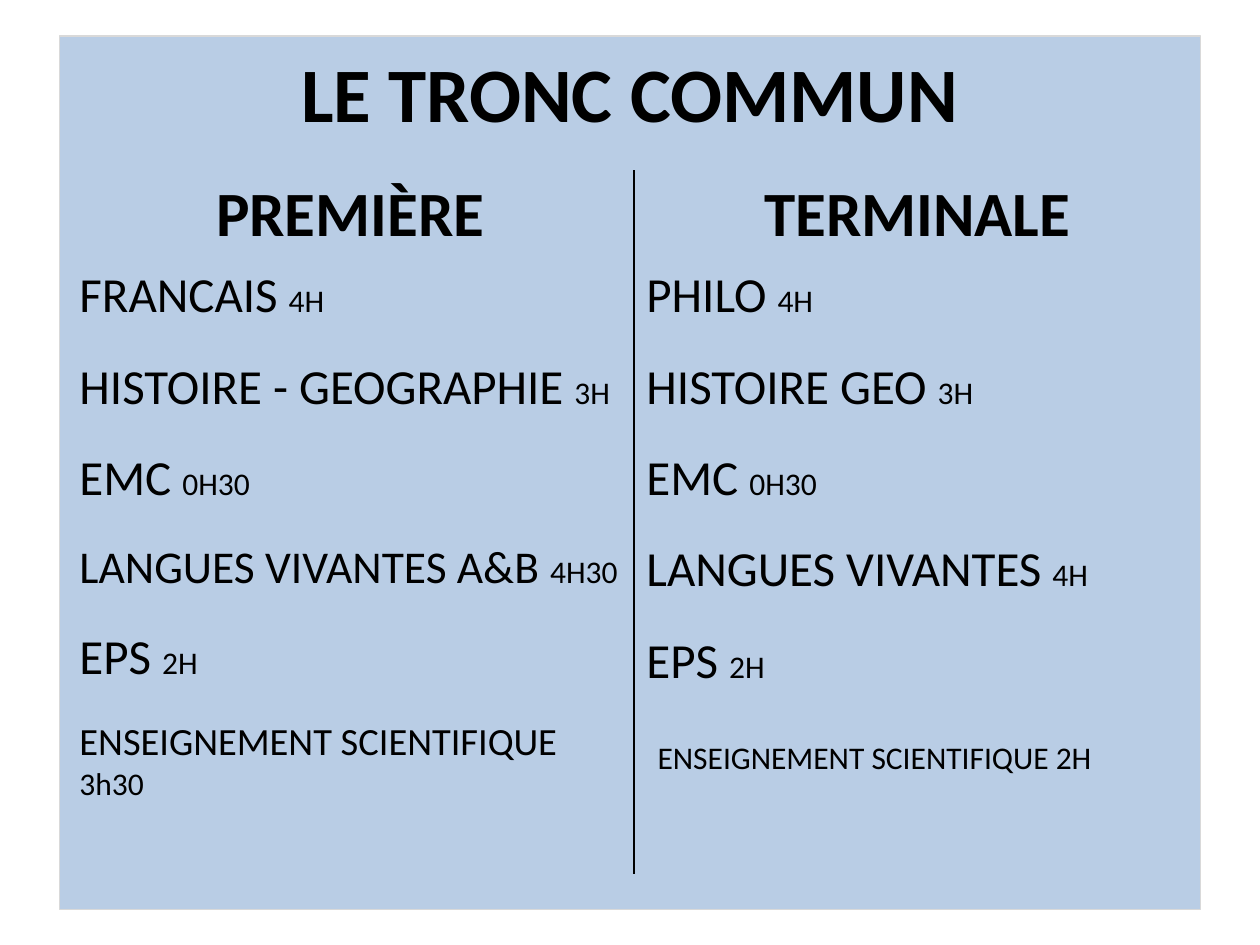
from dataclasses import dataclass

from lxml import etree
from pptx import Presentation
from pptx.dml.color import RGBColor
from pptx.enum import shapes, text
from pptx.oxml import ns
from pptx.util import Pt


@dataclass(frozen=True)
class Theme:
    font: str = "Calibri"
    ink: str = "000000"
    panel: str = "B9CDE5"
    panel_edge: str = "D9D9D9"
    title: int = 44
    heading: int = 36
    subject: int = 28
    long_subject: int = 26
    longest_subject: int = 22
    hours: int = 18


theme = Theme()
no_style_no_grid = "{2D5ABB26-0587-4C30-8999-92F81FD0307C}"

columns = [
    ("PREMIÈRE", [
        [("FRANCAIS ", theme.subject), ("4H", theme.hours)],
        [("HISTOIRE - GEOGRAPHIE ", theme.subject), ("3H", theme.hours)],
        [("EMC ", theme.subject), ("0H30", theme.hours)],
        [("LANGUES VIVANTES A&B ", theme.long_subject), ("4H30", theme.hours)],
        [("EPS ", theme.subject), ("2H", theme.hours)],
        [("ENSEIGNEMENT SCIENTIFIQUE ", theme.longest_subject), ("3h30", theme.hours)],
    ]),
    ("TERMINALE", [
        [("PHILO ", theme.subject), ("4H", theme.hours)],
        [("HISTOIRE GEO ", theme.subject), ("3H", theme.hours)],
        [("EMC ", theme.subject), ("0H30", theme.hours)],
        [("LANGUES VIVANTES ", theme.subject), ("4H", theme.hours)],
        [("EPS ", theme.subject), ("2H", theme.hours)],
        [(" ", theme.subject), ("ENSEIGNEMENT SCIENTIFIQUE 2H", theme.hours)],
    ]),
]


def add_run(paragraph, wording, size, bold=False):
    run = paragraph.add_run()
    run.text = wording
    run.font.name = theme.font
    run.font.size = Pt(size)
    run.font.bold = bold
    run.font.color.rgb = RGBColor.from_string(theme.ink)


def add_border(cell, side):
    properties = cell._tc.get_or_add_tcPr()
    line = etree.Element(ns.qn(f"a:{side}"), w=str(Pt(1.5)))
    fill = etree.SubElement(line, ns.qn("a:solidFill"))
    etree.SubElement(fill, ns.qn("a:srgbClr"), val=theme.ink)
    properties.insert(0, line)


presentation = Presentation()
presentation.slide_width = Pt(720)
presentation.slide_height = Pt(540)
slide = presentation.slides.add_slide(presentation.slide_layouts[5])

panel = slide.shapes.add_shape(
    shapes.MSO_SHAPE.RECTANGLE, Pt(34), Pt(20.6), Pt(652), Pt(499))
panel.shadow.inherit = False
panel.fill.solid()
panel.fill.fore_color.rgb = RGBColor.from_string(theme.panel)
panel.line.color.rgb = RGBColor.from_string(theme.panel_edge)
panel.line.width = Pt(0.75)

title = slide.shapes.title
panel.element.addnext(title.element)
title.left, title.top, title.width, title.height = Pt(36.7), Pt(22.3), Pt(646.6), Pt(60.5)
title.text_frame.vertical_anchor = text.MSO_ANCHOR.MIDDLE
title_paragraph = title.text_frame.paragraphs[0]
title_paragraph.alignment = text.PP_ALIGN.CENTER
add_run(title_paragraph, "LE TRONC COMMUN", theme.title, bold=True)

frame = slide.shapes.add_table(2, 2, Pt(38.2), Pt(97.2), Pt(648), Pt(402))
table = frame.table
table.first_row = False
table.horz_banding = False
for style in frame.element.iter(ns.qn("a:tableStyleId")):
    style.text = no_style_no_grid
table.rows[0].height = Pt(51)
table.rows[1].height = Pt(351)

for index, (heading, subjects) in enumerate(columns):
    table.columns[index].width = Pt(324)
    heading_cell = table.cell(0, index)
    subject_cell = table.cell(1, index)
    for cell in (heading_cell, subject_cell):
        cell.fill.background()
        add_border(cell, "lnR" if index == 0 else "lnL")

    heading_paragraph = heading_cell.text_frame.paragraphs[0]
    heading_paragraph.alignment = text.PP_ALIGN.CENTER
    add_run(heading_paragraph, heading, theme.heading, bold=True)

    body = subject_cell.text_frame
    for number, runs in enumerate(subjects):
        paragraph = body.add_paragraph() if number else body.paragraphs[0]
        paragraph.space_before = Pt(6)
        paragraph.space_after = Pt(12)
        for wording, size in runs:
            add_run(paragraph, wording, size)

presentation.save("out.pptx")
